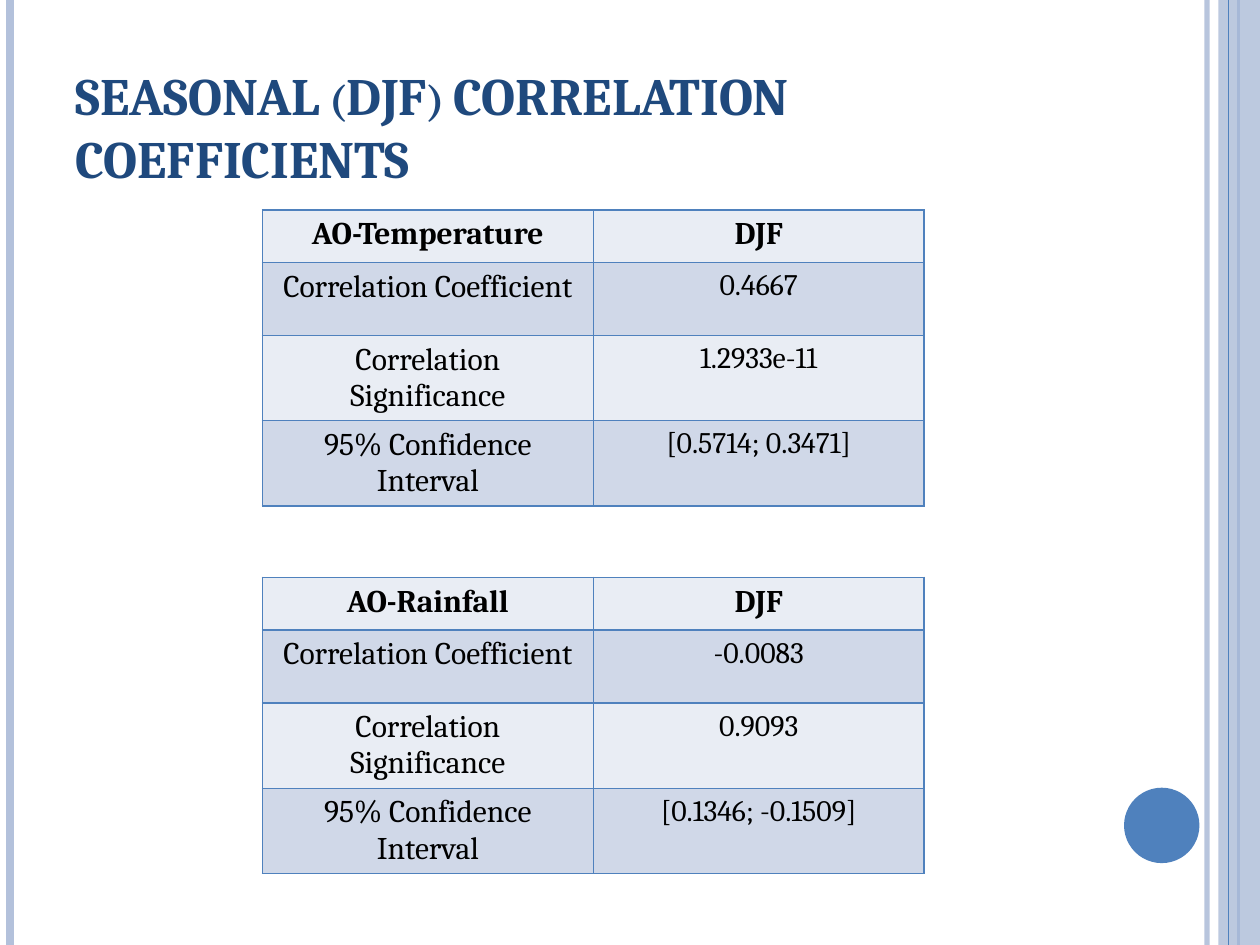
from typing import NamedTuple

from lxml.etree import SubElement
from pptx import Presentation
from pptx.dml.color import RGBColor
from pptx.enum.shapes import MSO_CONNECTOR, MSO_SHAPE
from pptx.enum.text import MSO_ANCHOR, PP_ALIGN
from pptx.oxml.ns import qn
from pptx.util import Cm, Pt

BLUE = RGBColor(0x4F, 0x81, 0xBD)
PALE_BLUE = RGBColor(0xB3, 0xC1, 0xDB)
NAVY = RGBColor(0x1F, 0x49, 0x7D)
BLACK = RGBColor(0, 0, 0)
BANDS = (RGBColor(0xE9, 0xED, 0xF4), RGBColor(0xD0, 0xD8, 0xE8))
FONT = "Cambria"
WIDTH, HEIGHT = Cm(25.4), Cm(19.05)
COLUMN_WIDTH = Cm(6.67)
ROW_HEIGHTS = (Cm(1.06), Cm(1.47), Cm(1.72), Cm(1.72))
LABELS = ("Correlation Coefficient", "Correlation Significance",
          "95% Confidence Interval")


class Stripe(NamedTuple):
    x: float
    weight: float
    color: RGBColor
    opacity: int = 100


class Result(NamedTuple):
    name: str
    top: float
    values: tuple[str, str, str]


OUTER_STRIPES = (Stripe(24.33, 3, PALE_BLUE, 93), Stripe(0.2, 4.5, PALE_BLUE),
                 Stripe(24.97, 1.5, BLUE))
INNER_STRIPE = Stripe(24.77, 0.75, BLUE)
RESULTS = (
    Result("AO-Temperature", 4.23, ("0.4667", "1.2933e-11", "[0.5714; 0.3471]")),
    Result("AO-Rainfall", 11.64, ("-0.0083", "0.9093", "[0.1346; -0.1509]")),
)


def set_opacity(element, percent: int) -> None:
    color = next(element.iter(qn("a:srgbClr")))
    SubElement(color, qn("a:alpha"), val=str(percent * 1000))


def add_stripe(s, stripe: Stripe) -> None:
    x = Cm(stripe.x)
    line = s.shapes.add_connector(MSO_CONNECTOR.STRAIGHT, x, 0, x, HEIGHT)
    line.line.color.rgb = stripe.color
    line.line.width = Pt(stripe.weight)
    if stripe.opacity < 100:
        set_opacity(line._element.spPr, stripe.opacity)
    SubElement(line._element.spPr, qn("a:effectLst"))


def add_plain_shape(s, kind, x, y, w, h, color: RGBColor):
    sp = s.shapes.add_shape(kind, x, y, w, h)
    sp.shadow.inherit = False
    sp.fill.solid()
    sp.fill.fore_color.rgb = color
    sp.line.fill.background()
    return sp


def add_borders(cell) -> None:
    tc_pr = cell._tc.get_or_add_tcPr()
    for side in ("a:lnL", "a:lnR", "a:lnT", "a:lnB"):
        ln = SubElement(tc_pr, qn(side), w=str(Pt(1)))
        SubElement(SubElement(ln, qn("a:solidFill")), qn("a:srgbClr"), val=str(BLUE))


def format_cell(cell, text: str, size: float, bold: bool, fill: RGBColor) -> None:
    add_borders(cell)
    cell.fill.solid()
    cell.fill.fore_color.rgb = fill
    cell.text = text
    p = cell.text_frame.paragraphs[0]
    p.alignment = PP_ALIGN.CENTER
    p.font.name, p.font.size, p.font.bold = FONT, Pt(size), bold
    p.font.color.rgb = BLACK


def add_result_table(s, result: Result) -> None:
    rows = [(result.name, "DJF"), *zip(LABELS, result.values)]
    table = s.shapes.add_table(len(rows), 2, Cm(5.29), Cm(result.top),
                               2 * COLUMN_WIDTH, sum(ROW_HEIGHTS)).table
    for column in table.columns:
        column.width = COLUMN_WIDTH
    for i, (row, height) in enumerate(zip(rows, ROW_HEIGHTS)):
        table.rows[i].height = height
        for j, text in enumerate(row):
            size = 17 if i and j else 18
            format_cell(table.cell(i, j), text, size, i == 0, BANDS[i % 2])


def add_title(s, text: str) -> None:
    title = s.shapes.title
    title.left, title.top, title.width, title.height = (
        Cm(1.27), Cm(0.76), Cm(20.75), Cm(3.18))
    tf = title.text_frame
    tf.text = text
    tf.word_wrap = True
    tf.vertical_anchor = MSO_ANCHOR.BOTTOM
    p = tf.paragraphs[0]
    p.alignment = PP_ALIGN.LEFT
    p.font.name, p.font.size, p.font.bold = FONT, Pt(30), True
    p.font.color.rgb = NAVY
    p.runs[0]._r.get_or_add_rPr().set("cap", "small")


def main() -> None:
    prs = Presentation()
    prs.slide_width, prs.slide_height = WIDTH, HEIGHT
    s = prs.slides.add_slide(prs.slide_layouts[5])

    # Side stripes and page-number disc
    for stripe in OUTER_STRIPES:
        add_stripe(s, stripe)
    band_left = Cm(24.56)
    band = add_plain_shape(s, MSO_SHAPE.RECTANGLE, band_left, 0,
                           WIDTH - band_left, HEIGHT, PALE_BLUE)
    set_opacity(band._element.spPr, 87)
    add_stripe(s, INNER_STRIPE)
    add_plain_shape(s, MSO_SHAPE.OVAL, Cm(22.66), Cm(15.88), Cm(1.52), Cm(1.52), BLUE)

    # Title and tables
    add_title(s, "SEASONAL (DJF) CORRELATION COEFFICIENTS")
    for result in RESULTS:
        add_result_table(s, result)

    prs.save("out.pptx")


if __name__ == "__main__":
    main()
